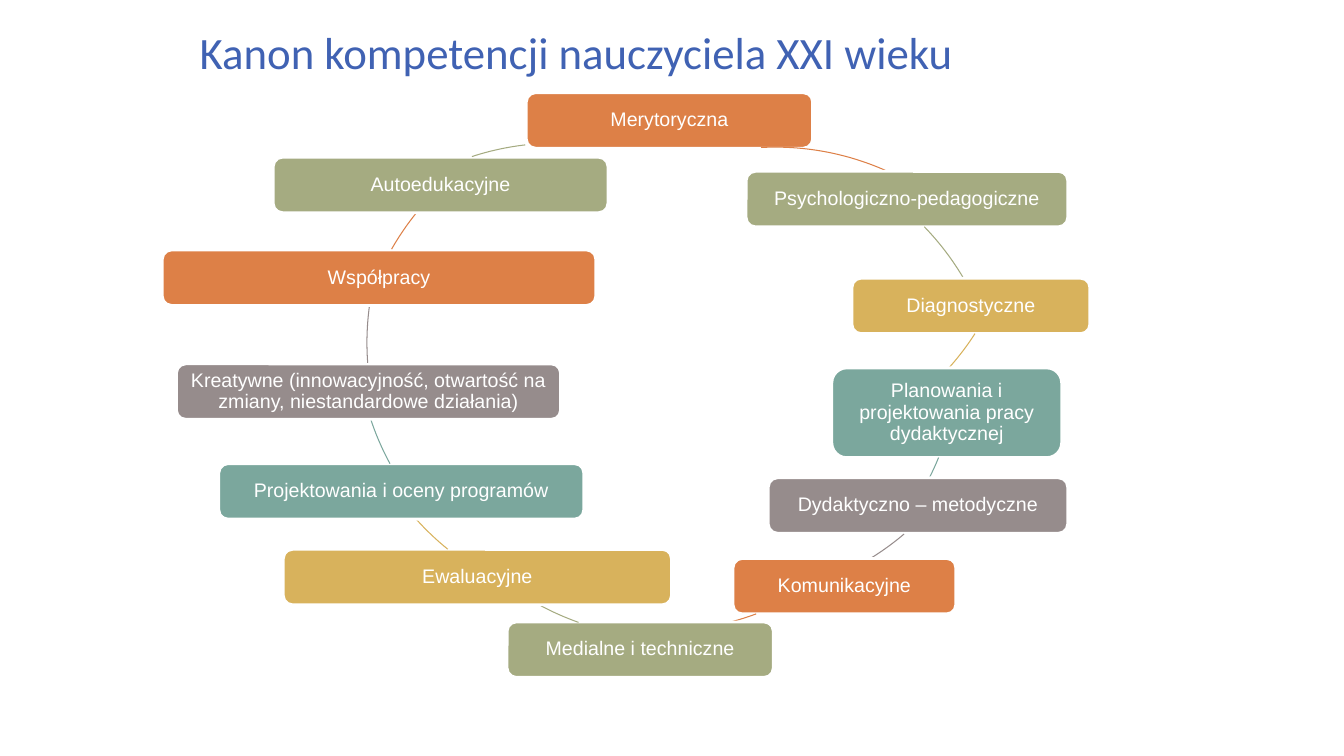
from math import atan2, degrees

from pptx import Presentation
from pptx.dml.color import RGBColor
from pptx.enum.shapes import MSO_SHAPE
from pptx.enum.text import MSO_ANCHOR, MSO_AUTO_SIZE, PP_ALIGN
from pptx.util import Inches, Pt

ROUNDED, ARC = MSO_SHAPE.ROUNDED_RECTANGLE, MSO_SHAPE.ARC
MIDDLE, NO_FIT = MSO_ANCHOR.MIDDLE, MSO_AUTO_SIZE.NONE
LEFT, CENTER = PP_ALIGN.LEFT, PP_ALIGN.CENTER

WHITE = RGBColor(0xFF, 0xFF, 0xFF)
BLUE = RGBColor(0x40, 0x62, 0xB3)
ORANGE = RGBColor(0xDD, 0x80, 0x47)
OLIVE = RGBColor(0xA5, 0xAB, 0x81)
GOLD = RGBColor(0xD8, 0xB2, 0x5C)
TEAL = RGBColor(0x7B, 0xA7, 0x9D)
GREY = RGBColor(0x96, 0x8C, 0x8C)
CYCLE_COLORS = [ORANGE, OLIVE, GOLD, TEAL, GREY]

TITLE_BOX = (1.88, 0.13, 9.57, 0.76)
CYCLE_BOX = (1.6, 0.9)
LOW, TALL = 0.55, 0.89
RADIUS = 2.7

COMPETENCES = [
    ("Merytoryczna", (3.62, 0.02, 2.84, LOW),
     (3.39, 0.56), (5.95, 0.56), (7.18, 0.79)),
    ("Psychologiczno-pedagogiczne", (5.8, 0.8, 3.19, LOW),
     (2.93, 0.53), (7.57, 1.35), (7.95, 1.85)),
    ("Diagnostyczne", (6.85, 1.86, 2.36, LOW),
     (3.1, -1.75), (8.07, 2.41), (7.81, 2.75)),
    ("Planowania i projektowania pracy dydaktycznej", (6.65, 2.75, 2.28, TALL),
     (2.51, -0.08), (7.71, 3.64), (7.62, 3.84)),
    ("Dydaktyczno – metodyczne", (6.02, 3.84, 2.97, LOW),
     (2.92, -0.36), (7.36, 4.39), (7.02, 4.64)),
    ("Komunikacyjne", (5.67, 4.64, 2.21, LOW),
     (2.26, -0.04), (5.9, 5.19), (5.63, 5.27)),
    ("Medialne i techniczne", (3.43, 5.27, 2.64, LOW),
     (2.34, 0.03), (4.14, 5.27), (3.75, 5.1)),
    ("Ewaluacyjne", (1.21, 4.55, 3.85, LOW),
     (1.84, -0.25), (2.84, 4.55), (2.53, 4.25)),
    ("Projektowania i oceny programów", (0.57, 3.7, 3.62, LOW),
     (1.94, -0.29), (2.27, 3.7), (2.08, 3.26)),
    ("Kreatywne (innowacyjność, otwartość na zmiany, niestandardowe działania)",
     (0.15, 2.71, 3.81, LOW),
     (2.04, -0.2), (2.05, 2.7), (2.07, 2.13)),
    ("Współpracy", (0.01, 1.58, 4.3, LOW),
     (1.93, 0.21), (2.28, 1.57), (2.53, 1.21)),
    ("Autoedukacyjne", (1.11, 0.66, 3.32, LOW),
     (1.22, 0.52), (3.08, 0.65), (3.61, 0.54)),
]

INSET = Inches(0.06)
LABEL_FRAME = {"word_wrap": True, "vertical_anchor": MIDDLE,
               "margin_left": INSET, "margin_right": INSET,
               "margin_top": INSET, "margin_bottom": INSET}
LABEL_PARAGRAPH = {"alignment": CENTER, "line_spacing": 0.9}
LABEL_FONT = {"name": "Arial", "size": Pt(14)}
TITLE_FRAME = {"word_wrap": True, "vertical_anchor": MIDDLE, "auto_size": NO_FIT}
TITLE_FONT = {"name": "Calibri", "size": Pt(32)}


def apply(target, values):
    for key, value in values.items():
        setattr(target, key, value)


def write(frame, text, color, frame_format, paragraph_format, font_format):
    frame.text = text
    paragraph = frame.paragraphs[0]
    apply(frame, frame_format)
    apply(paragraph, paragraph_format)
    font = paragraph.runs[0].font
    apply(font, font_format)
    font.color.rgb = color


def add_title(slide, box):
    title = slide.shapes.title
    title.left, title.top, title.width, title.height = map(Inches, box)
    write(title.text_frame, "Kanon kompetencji nauczyciela XXI wieku", BLUE,
          TITLE_FRAME, {"alignment": LEFT}, TITLE_FONT)


def add_competence(slide, name, box, color):
    competence = slide.shapes.add_shape(ROUNDED, *map(Inches, box))
    competence.shadow.inherit = False
    competence.fill.solid()
    competence.fill.fore_color.rgb = color
    competence.line.color.rgb = WHITE
    competence.line.width = Pt(2)
    write(competence.text_frame, name, WHITE,
          LABEL_FRAME, LABEL_PARAGRAPH, LABEL_FONT)


def add_link(slide, corner, ends, color):
    left, top = corner
    link = slide.shapes.add_shape(
        ARC, *map(Inches, (left, top, 2 * RADIUS, 2 * RADIUS)))
    for index, (x, y) in enumerate(ends):
        angle = degrees(atan2(y - top - RADIUS, x - left - RADIUS)) % 360
        link.adjustments[index] = angle * 60000 / 100000
    link.shadow.inherit = False
    link.fill.background()
    link.line.color.rgb = color
    link.line.width = Pt(0.75)


def add_cycle(slide, box):
    left, top = box

    def shift(point):
        return left + point[0], top + point[1]

    for index, (name, place, circle, start, end) in enumerate(COMPETENCES):
        color = CYCLE_COLORS[index % len(CYCLE_COLORS)]
        add_competence(slide, name, shift(place) + place[2:], color)
        add_link(slide, shift(circle), (shift(start), shift(end)), color)


def main():
    deck = Presentation()
    deck.slide_width, deck.slide_height = Inches(13.33), Inches(7.5)
    slide = deck.slides.add_slide(deck.slide_layouts[5])
    add_title(slide, TITLE_BOX)
    add_cycle(slide, CYCLE_BOX)
    deck.save("out.pptx")


if __name__ == "__main__":
    main()
